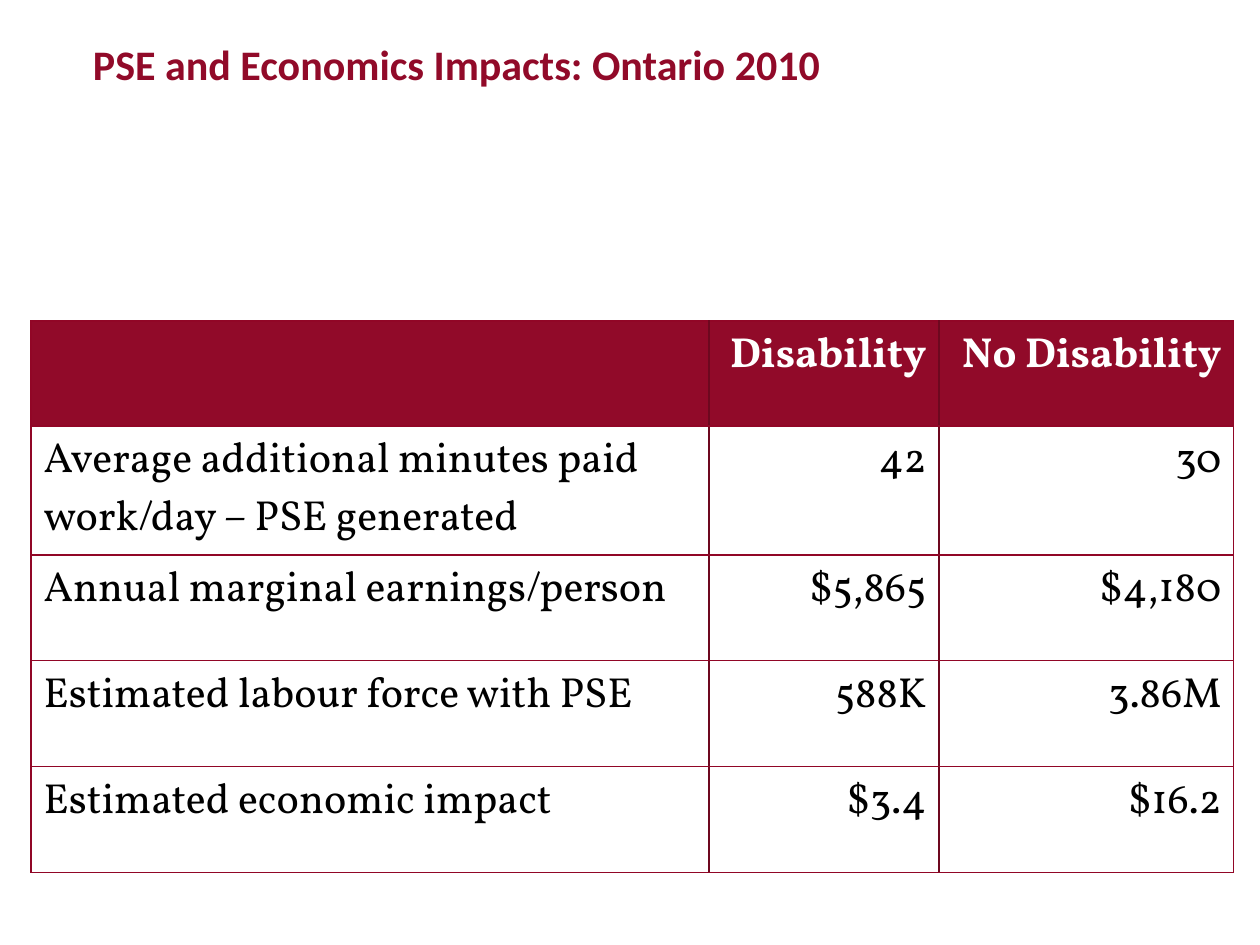
from dataclasses import dataclass

from lxml.etree import SubElement
from pptx import Presentation
from pptx.dml.color import RGBColor as Color
from pptx.enum.text import MSO_ANCHOR as Anchor, PP_ALIGN as Align
from pptx.oxml.ns import qn
from pptx.util import Emu, Pt

PX_PER_INCH = 126


@dataclass(frozen=True)
class Theme:
    crimson: str = "910A29"
    outer_line: str = "910626"
    column_line: str = "6D081F"
    white: str = "FFFFFF"
    black: str = "000000"
    title_font: str = "Calibri"
    table_font: str = "Vollkorn"
    text_size: int = 24


THEME = Theme()
TITLE = "PSE and Economics Impacts: Ontario 2010"
ROWS = [
    ("", "Disability", "No Disability"),
    ("Average additional minutes paid work/day – PSE generated", "42", "30"),
    ("Annual marginal earnings/person", "$5,865", "$4,180"),
    ("Estimated labour force with PSE", "588K", "3.86M"),
    ("Estimated economic impact", "$3.4", "$16.2"),
]
COLUMN_WIDTHS = (678, 230, 295)
ROW_HEIGHTS = (105, 129, 106, 106, 106)


def px(length):
    return Emu(round(length * 914400 / PX_PER_INCH))


def style_font(font, name, color, bold):
    font.name = name
    font.size = Pt(THEME.text_size)
    font.bold = bold
    font.color.rgb = Color.from_string(color)


def set_border(cell, side, color, points):
    """Draw one side of a cell: L, R, T or B."""
    line = SubElement(cell._tc.get_or_add_tcPr(), qn(f"a:ln{side}"), w=str(Pt(points)))
    fill = SubElement(line, qn("a:solidFill"))
    SubElement(fill, qn("a:srgbClr"), val=color)


def add_title(page, left, top, width, height):
    box = page.shapes.add_textbox(px(left), px(top), px(width), px(height))
    frame = box.text_frame
    frame.word_wrap = True
    frame.vertical_anchor = Anchor.MIDDLE
    frame.margin_left = frame.margin_bottom = 0
    frame.text = TITLE
    para = frame.paragraphs[0]
    para.line_spacing = Pt(24)
    style_font(para.runs[0].font, THEME.title_font, THEME.crimson, True)


def fill_cell(cell, text, row, column):
    header = row == 0
    inner_left = column > 0
    inner_right = column < len(COLUMN_WIDTHS) - 1
    outer, divider = (THEME.outer_line, 0.75), (THEME.column_line, 1)
    set_border(cell, "L", *(divider if inner_left else outer))
    set_border(cell, "R", *(divider if inner_right else outer))
    set_border(cell, "T", *outer)
    set_border(cell, "B", *outer)
    cell.fill.solid()
    cell.fill.fore_color.rgb = Color.from_string(THEME.crimson if header else THEME.white)
    cell.text_frame.text = text
    para = cell.text_frame.paragraphs[0]
    para.alignment = Align.RIGHT if inner_left else Align.LEFT
    for span in para.runs:
        style_font(span.font, THEME.table_font, THEME.white if header else THEME.black, header)


def add_impact_table(page, left, top):
    frame = page.shapes.add_table(
        len(ROWS), len(COLUMN_WIDTHS), px(left), px(top),
        px(sum(COLUMN_WIDTHS)), px(sum(ROW_HEIGHTS)))
    table = frame.table
    table.horz_banding = False
    for column, width in zip(table.columns, COLUMN_WIDTHS):
        column.width = px(width)
    for row, height in zip(table.rows, ROW_HEIGHTS):
        row.height = px(height)
    for row, texts in enumerate(ROWS):
        for column, text in enumerate(texts):
            fill_cell(table.cell(row, column), text, row, column)


def main():
    deck = Presentation()
    deck.slide_width, deck.slide_height = px(1260), px(945)
    page = deck.slides.add_slide(deck.slide_layouts[6])
    add_title(page, 93, 0, 872, 130)
    add_impact_table(page, 31, 321)
    deck.save("out.pptx")


if __name__ == "__main__":
    main()
